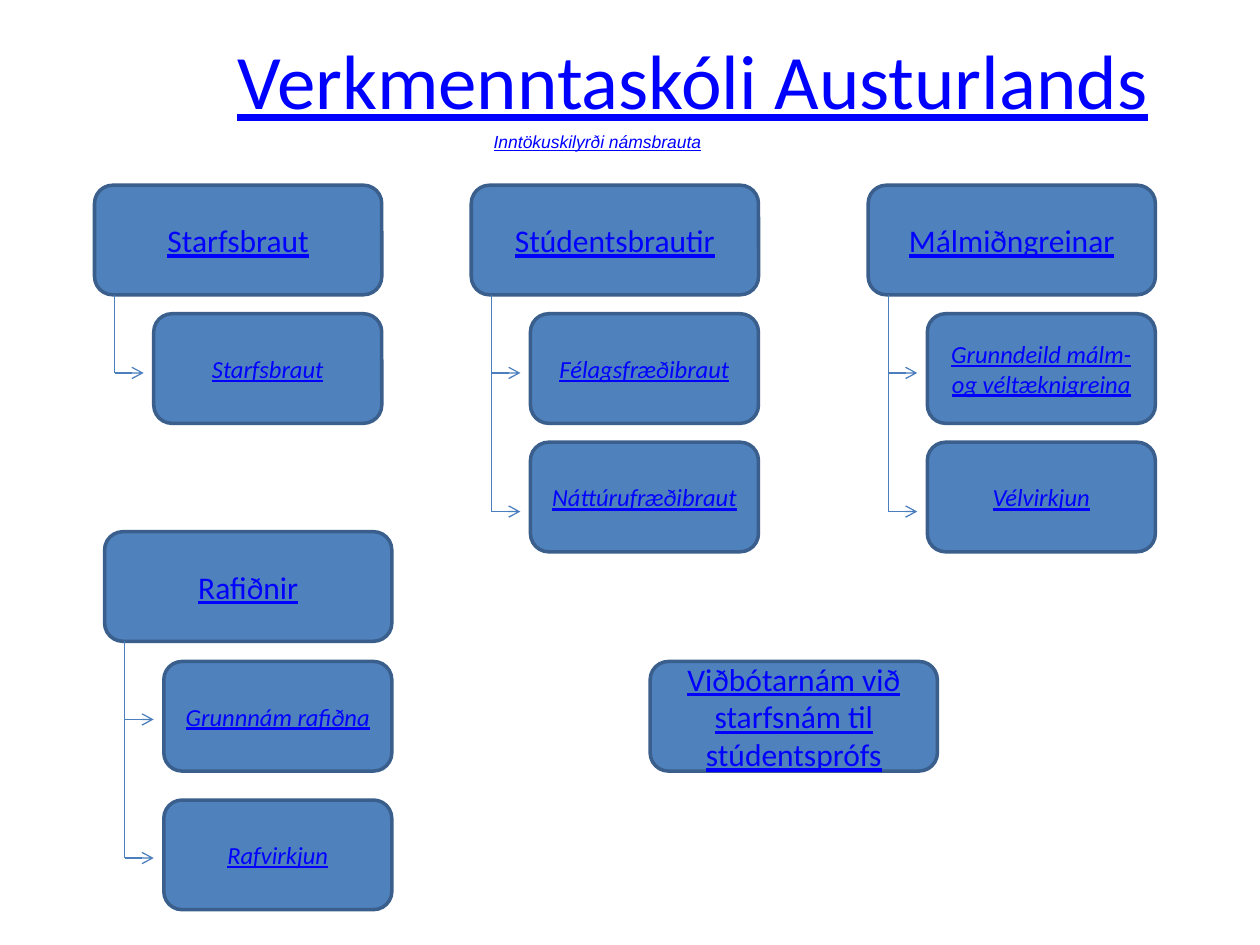
from dataclasses import dataclass

from lxml.etree import SubElement
from pptx import Presentation
from pptx.dml.color import RGBColor
from pptx.enum.shapes import MSO_CONNECTOR as Connector, MSO_SHAPE as Shape
from pptx.enum.text import MSO_ANCHOR as Anchor, PP_ALIGN as Align
from pptx.oxml.ns import qn
from pptx.util import Inches, Pt

COLORS = {"box": "4F81BD", "border": "3A5F8C", "branch": "4B7EBC", "text": "0000FF"}

HEADING_WIDTH, BRANCH_WIDTH, BOX_HEIGHT = 2.28, 1.81, 0.87
BRANCH_INDENT = HEADING_WIDTH - BRANCH_WIDTH
STEM_INDENT, ARROW_LENGTH = 0.16, 0.23
ARROW_DROPS = (1.49, 2.59)  # from the top of the heading


@dataclass
class Department:
    heading: str
    left: float
    top: float
    branches: tuple[str, ...] = ()
    drops: tuple[float, ...] = (1.02, 2.04)  # branch tops below the heading top


DEPARTMENTS = [
    Department("Starfsbraut", 0.75, 1.47, ("Starfsbraut",)),
    Department("Stúdentsbrautir", 3.74, 1.47, ("Félagsfræðibraut", "Náttúrufræðibraut")),
    Department("Málmiðngreinar", 6.89, 1.47,
               ("Grunndeild málm- og véltæknigreina", "Vélvirkjun")),
    Department("Rafiðnir", 0.83, 4.22, ("Grunnnám rafiðna", "Rafvirkjun"), (1.03, 2.13)),
    Department("Viðbótarnám við starfsnám til stúdentsprófs", 5.16, 5.25),
]


def color(key: str) -> RGBColor:
    return RGBColor.from_string(COLORS[key])


def write(frame, text: str, size: float, font: str = "Calibri",
          italic: bool = False, align=Align.CENTER) -> None:
    frame.text = text
    frame.word_wrap = True
    paragraph = frame.paragraphs[0]
    paragraph.alignment = align
    run_font = paragraph.runs[0].font
    run_font.name, run_font.size = font, Pt(size)
    run_font.italic, run_font.underline = italic, True
    run_font.color.rgb = color("text")


def add_box(slide, text: str, left: float, top: float, width: float,
            size: float, italic: bool = False) -> None:
    box = slide.shapes.add_shape(Shape.ROUNDED_RECTANGLE, Inches(left), Inches(top),
                                 Inches(width), Inches(BOX_HEIGHT))
    box.shadow.inherit = False
    box.fill.solid()
    box.fill.fore_color.rgb = color("box")
    box.line.color.rgb = color("border")
    box.line.width = Pt(2)
    box.text_frame.vertical_anchor = Anchor.MIDDLE
    write(box.text_frame, text, size, italic=italic)


def add_line(slide, x1: float, y1: float, x2: float, y2: float, arrow: bool = False) -> None:
    line = slide.shapes.add_connector(Connector.STRAIGHT, Inches(x1), Inches(y1),
                                      Inches(x2), Inches(y2))
    line.line.color.rgb = color("branch")
    line.line.width = Pt(0.75)
    if arrow:
        SubElement(line.line._get_or_add_ln(), qn("a:tailEnd"), type="arrow")
    SubElement(line._element.spPr, qn("a:effectLst"))


def add_department(slide, dept: Department) -> None:
    add_box(slide, dept.heading, dept.left, dept.top, HEADING_WIDTH, 18)
    for branch, drop in zip(dept.branches, dept.drops):
        add_box(slide, branch, dept.left + BRANCH_INDENT, dept.top + drop,
                BRANCH_WIDTH, 14, italic=True)
    if not dept.branches:
        return
    # Stem down from the heading, with one arrow to each branch
    stem = dept.left + STEM_INDENT
    arrow_rows = [dept.top + drop for drop in ARROW_DROPS[:len(dept.branches)]]
    add_line(slide, stem, dept.top + BOX_HEIGHT, stem, arrow_rows[-1])
    for row in arrow_rows:
        add_line(slide, stem, row, stem + ARROW_LENGTH, row, arrow=True)


def main() -> None:
    deck = Presentation()
    deck.slide_width, deck.slide_height = Inches(10), Inches(7.5)
    slide = deck.slides.add_slide(deck.slide_layouts[5])

    # Title
    title = slide.shapes.title
    title.left, title.top = Inches(1), Inches(0)
    title.width, title.height = Inches(9), Inches(1.25)
    title.text_frame.vertical_anchor = Anchor.MIDDLE
    write(title.text_frame, "Verkmenntaskóli Austurlands", 44)

    # Departments and their branches
    for dept in DEPARTMENTS:
        add_department(slide, dept)

    # Admission requirements
    requirements = slide.shapes.add_textbox(Inches(3.82), Inches(0.99),
                                            Inches(2.36), Inches(0.27))
    write(requirements.text_frame, "Inntökuskilyrði námsbrauta", 10, "Arial",
          italic=True, align=Align.LEFT)

    deck.save("out.pptx")


if __name__ == "__main__":
    main()
